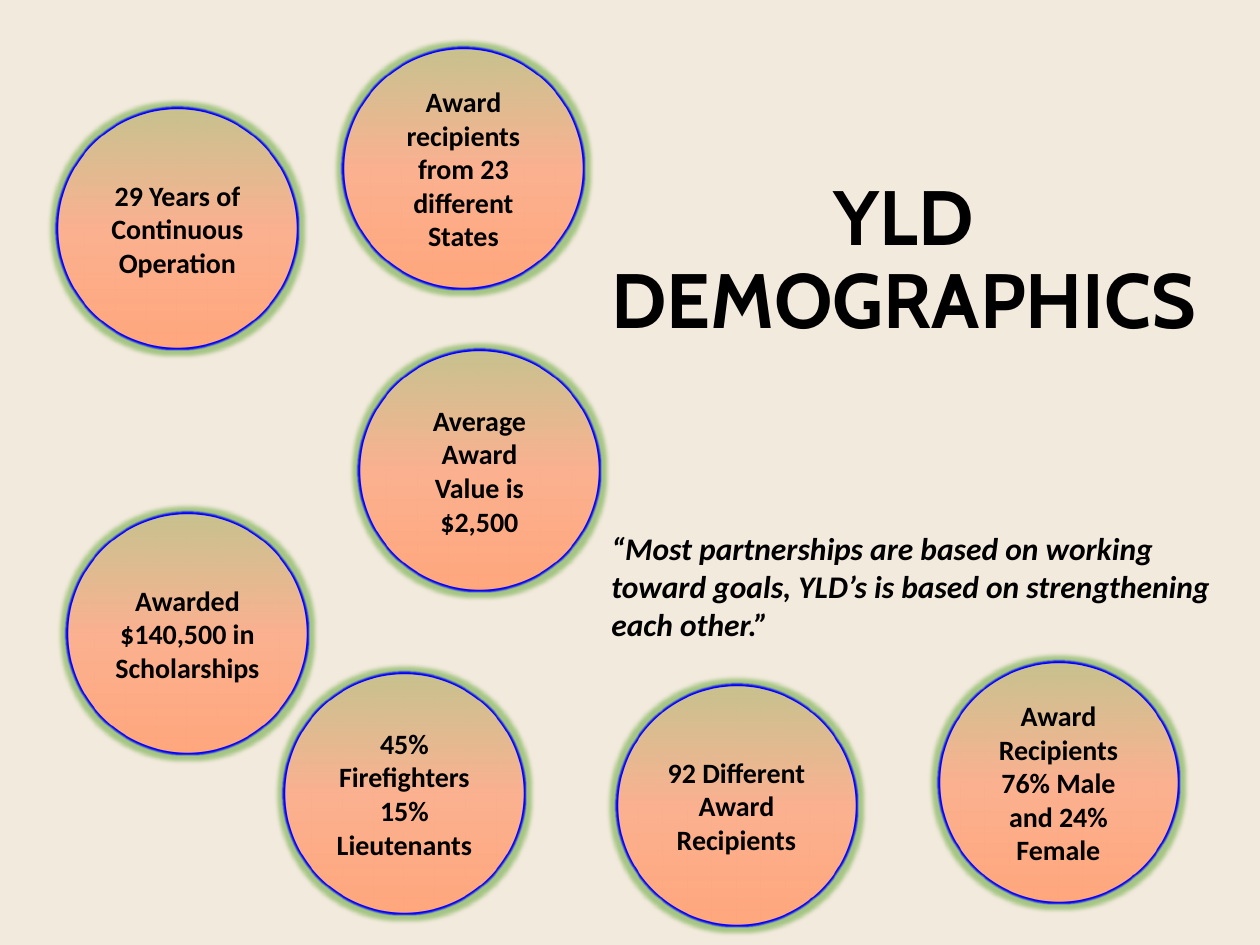
"""Build the YLD demographics slide: seven fact circles, a title and a quote."""
from lxml.etree import SubElement
from pptx import Presentation
from pptx.dml.color import RGBColor
from pptx.enum.shapes import MSO_SHAPE
from pptx.enum.text import MSO_ANCHOR, PP_ALIGN
from pptx.oxml.ns import qn
from pptx.util import Pt

PX = 914400 / 126
CREAM = RGBColor(0xF3, 0xEA, 0xDE)
BLACK = RGBColor(0x00, 0x00, 0x00)
BLUE = RGBColor(0x00, 0x00, 0xFF)
NAVY = RGBColor(0x0E, 0x2C, 0x3E)
GREEN = RGBColor(0x70, 0xAD, 0x47)
PEACH = RGBColor(0xFD, 0xBC, 0x9E)
SALMON = RGBColor(0xFB, 0xB1, 0x90)
ORANGE = RGBColor(0xFF, 0xA6, 0x7C)
STOPS = [(0, PEACH, 39), (50, SALMON, 100), (100, ORANGE, 100)]
DIAMETER = 241
FACTS = [
    (57, 108, "29 Years of Continuous Operation"),
    (67, 513, "Awarded $140,500 in Scholarships"),
    (616, 685, "92 Different Award Recipients"),
    (359, 350, "Average Award Value is $2,500"),
    (938, 662, "Award Recipients 76% Male and 24% Female"),
    (343, 48, "Award recipients\nfrom 23 different States"),
    (284, 673, "45% Firefighters\n15% Lieutenants"),
]


def add_color(parent, color, alpha):
    swatch = SubElement(parent, qn("a:srgbClr"), val=str(color))
    SubElement(swatch, qn("a:alpha"), val=str(alpha * 1000))


def write(frame, text, size, font="Calibri", align=PP_ALIGN.CENTER, italic=None,
          spacing=None, anchor=MSO_ANCHOR.MIDDLE, wrap=True, outline=None):
    frame.word_wrap = wrap
    frame.vertical_anchor = anchor
    frame.text = text
    for paragraph in frame.paragraphs:
        paragraph.alignment = align
        paragraph.line_spacing = spacing
        for run in paragraph.runs:
            run.font.name = font
            run.font.size = Pt(size)
            run.font.bold = True
            run.font.italic = italic
            run.font.color.rgb = BLACK
            if outline is not None:
                properties = run.font._element if hasattr(run.font, "_element") else run._r.rPr
                edge = SubElement(properties, qn("a:ln"), w=str(Pt(1)))
                add_color(SubElement(edge, qn("a:solidFill")), outline, 100)
                properties.insert(0, edge)


presentation = Presentation()
presentation.slide_width = round(1260 * PX)
presentation.slide_height = round(945 * PX)
slide = presentation.slides.add_slide(presentation.slide_layouts[6])
slide.background.fill.solid()
slide.background.fill.fore_color.rgb = CREAM

title = slide.shapes.add_textbox(*(round(n * PX) for n in (490, 175, 828, 175)))
write(title.text_frame, "YLD\nDEMOGRAPHICS", 44, font="Cabin", spacing=0.9, outline=NAVY)

for left, top, fact in FACTS:
    box = (round(n * PX) for n in (left, top, DIAMETER, DIAMETER))
    circle = slide.shapes.add_shape(MSO_SHAPE.OVAL, *box)
    circle.line.color.rgb = BLUE
    circle.line.width = Pt(2.25)
    circle.fill.gradient()
    circle.fill.gradient_angle = 270
    stop_list = circle._element.spPr.find(".//" + qn("a:gsLst"))
    stop_list.clear()
    for position, color, alpha in STOPS:
        add_color(SubElement(stop_list, qn("a:gs"), pos=str(position * 1000)), color, alpha)
    circle.shadow.inherit = False
    effects = circle._element.spPr.find(qn("a:effectLst"))
    add_color(SubElement(effects, qn("a:glow"), rad=str(Pt(5))), GREEN, 60)
    SubElement(effects, qn("a:softEdge"), rad=str(Pt(1)))
    write(circle.text_frame, fact, 16)

quote = slide.shapes.add_textbox(*(round(n * PX) for n in (599, 523, 640, 127)))
write(
    quote.text_frame,
    "“Most partnerships are based on working\n"
    "toward goals, YLD’s is based on strengthening\n"
    "each other.”",
    18, align=PP_ALIGN.LEFT, italic=True, anchor=MSO_ANCHOR.TOP, wrap=False,
)

presentation.save("out.pptx")
